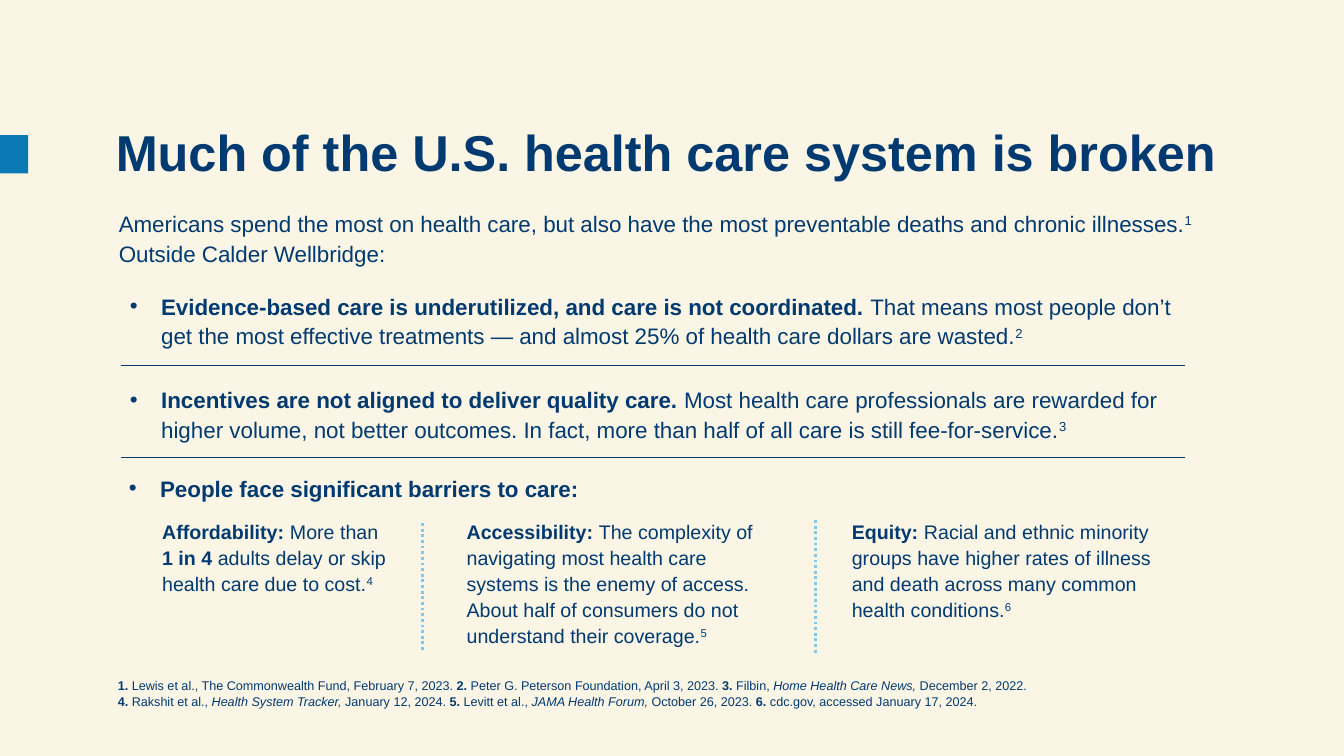
from lxml.etree import SubElement
from pptx import Presentation
from pptx.dml.color import RGBColor
from pptx.enum.dml import MSO_LINE_DASH_STYLE as Dash
from pptx.enum.shapes import MSO_CONNECTOR, MSO_SHAPE
from pptx.enum.text import MSO_ANCHOR, MSO_AUTO_SIZE as AutoSize
from pptx.oxml.ns import qn
from pptx.util import Inches, Pt

NAVY, BLUE, SKY, CREAM = "003A70", "0B7AB4", "80C8EF", "FBF5E5"

# Runs are (text, style): "b" bold, "i" italic, "^" superscript, "br" line break
INTRO = [
    ("Americans spend the most on health care, but also have the most "
     "preventable deaths and chronic illnesses.", ""),
    ("1 ", "^"), ("Outside Calder Wellbridge:", "")]

# Bullets: left, top, width, line spacing, runs
BULLETS = [
    (1.19, 2.83, 10.56, 1.1, [
        ("Evidence-based care is underutilized, and care is not coordinated. ", "b"),
        ("That means most people don’t get the most effective treatments — "
         "and almost 25% of health care dollars are wasted.", ""), ("2", "^")]),
    (1.19, 3.76, 10.4, 1.1, [
        ("Incentives are not aligned to deliver quality care. ", "b"),
        ("Most health care professionals are rewarded for higher volume, not better "
         "outcomes. In fact, more than half of all care is still fee-for-service.", ""),
        ("3", "^")]),
    (1.18, 4.66, 11.4, 1.0, [("People face significant barriers to care:", "b")])]

# Barriers: left, width, height, indent, runs
BARRIERS = [
    (1.51, 2.47, 0.86, 0, [
        ("Affordability:", "b"), (" More than ", ""), ("", "br"), ("1 in 4 ", "b"),
        ("adults delay or skip health care due to cost.", ""), ("4", "^")]),
    (4.53, 3.34, 1.38, 0, [
        ("Accessibility: ", "b"),
        ("The complexity of navigating most health care systems is the enemy of "
         "access. About half of consumers do not understand their coverage.", ""),
        ("5", "^")]),
    (7.85, 3.98, 1.12, 0.5, [
        ("Equity: ", "b"),
        ("Racial and ethnic minority groups have higher rates of "
         "illness and death across many common health conditions.", ""),
        ("6", "^")])]

SOURCES = [
    ("1. ", "b"), ("Lewis et al., The Commonwealth Fund, February 7, 2023. ", ""),
    ("2.", "b"), (" Peter G. Peterson Foundation, April 3, 2023. ", ""),
    ("3. ", "b"), ("Filbin, ", ""), ("Home Health Care News, ", "i"),
    ("December 2, 2022. ", ""),
    ("4. ", "b"), ("Rakshit et al., ", ""), ("Health System Tracker,", "i"),
    (" January 12, 2024. ", ""),
    ("5.", "b"), (" Levitt et al., ", ""), ("JAMA Health Forum, ", "i"),
    ("October 26, 2023. ", ""),
    ("6. ", "b"), ("cdc.gov, accessed January 17, 2024.", "")]


def color(value):
    return RGBColor.from_string(value)


def add_runs(p, runs, size):
    for text, style in runs:
        if style == "br":
            p.add_line_break()
            SubElement(p._p[-1], qn("a:rPr"), sz=str(size * 100))
            continue
        r = p.add_run()
        r.text = text
        fmt = {"name": "Arial", "size": Pt(size), "bold": style == "b",
               "italic": style == "i"}
        for key, value in fmt.items():
            setattr(r.font, key, value)
        r.font.color.rgb = color(NAVY)
        if style == "^":
            r.font._element.set("baseline", "30000")


def add_text(s, box, runs, size, spacing=1.0, indent=0, bullet=False,
             anchor=MSO_ANCHOR.TOP, fit=AutoSize.SHAPE_TO_FIT_TEXT):
    tf = s.shapes.add_textbox(*map(Inches, box)).text_frame
    fmt = {"word_wrap": True, "auto_size": fit, "vertical_anchor": anchor}
    for key, value in fmt.items():
        setattr(tf, key, value)
    p = tf.paragraphs[0]
    pPr = p._p.get_or_add_pPr()
    pPr.set("marL", str(Inches(indent)))
    if bullet:
        pPr.set("indent", str(-Inches(indent)))
        SubElement(pPr, qn("a:buFont"), typeface="Arial")
        SubElement(pPr, qn("a:buChar"), char="•")
    p.line_spacing = spacing
    add_runs(p, runs, size)


def add_line(s, x1, y1, x2, y2, line_color, width, dash=None):
    line = s.shapes.add_connector(
        MSO_CONNECTOR.STRAIGHT, *map(Inches, (x1, y1, x2, y2)))
    line.line.color.rgb = color(line_color)
    line.line.width = Pt(width)
    if dash:
        line.line.dash_style = dash
    SubElement(line._element.spPr, qn("a:effectLst"))


def add_block(s, box, fill):
    sp = s.shapes.add_shape(MSO_SHAPE.RECTANGLE, *map(Inches, box))
    sp.shadow.inherit = False
    sp.fill.solid()
    sp.fill.fore_color.rgb = color(fill)
    sp.line.fill.background()


def main():
    prs = Presentation()
    prs.slide_width, prs.slide_height = Inches(13.33), Inches(7.5)
    s = prs.slides.add_slide(prs.slide_layouts[6])
    s.background.fill.solid()
    s.background.fill.fore_color.rgb = color(CREAM)

    # Title with its accent, and the introduction
    add_block(s, (0, 1.34, 0.28, 0.38), BLUE)
    add_text(s, (1.05, 0.98, 11.69, 0.88),
             [("Much of the U.S. health care system is broken", "b")], 36,
             spacing=0.9, anchor=MSO_ANCHOR.BOTTOM, fit=AutoSize.NONE)
    add_text(s, (1.08, 2.01, 11.16, 0.67), INTRO, 16, spacing=1.1)

    # Bullets and the rules between them
    for left, top, width, spacing, runs in BULLETS:
        height = 0.67 if spacing > 1 else 0.37
        add_text(s, (left, top, width, height), runs, 16, spacing, 0.31, bullet=True)
    for y in (3.63, 4.54):
        add_line(s, 1.2, y, 11.75, y, NAVY, 0.75)

    # Barrier columns and their dotted dividers
    for left, width, height, indent, runs in BARRIERS:
        add_text(s, (left, 5.09, width, height), runs, 14, 1.1, indent)
    for x, top, bottom in ((4.19, 5.19, 6.46), (8.09, 5.16, 6.49)):
        add_line(s, x, top, x, bottom, SKY, 2, Dash.ROUND_DOT)

    # Sources
    add_text(s, (1.07, 6.68, 9.23, 0.4), SOURCES, 9)
    prs.save("out.pptx")


if __name__ == "__main__":
    main()
